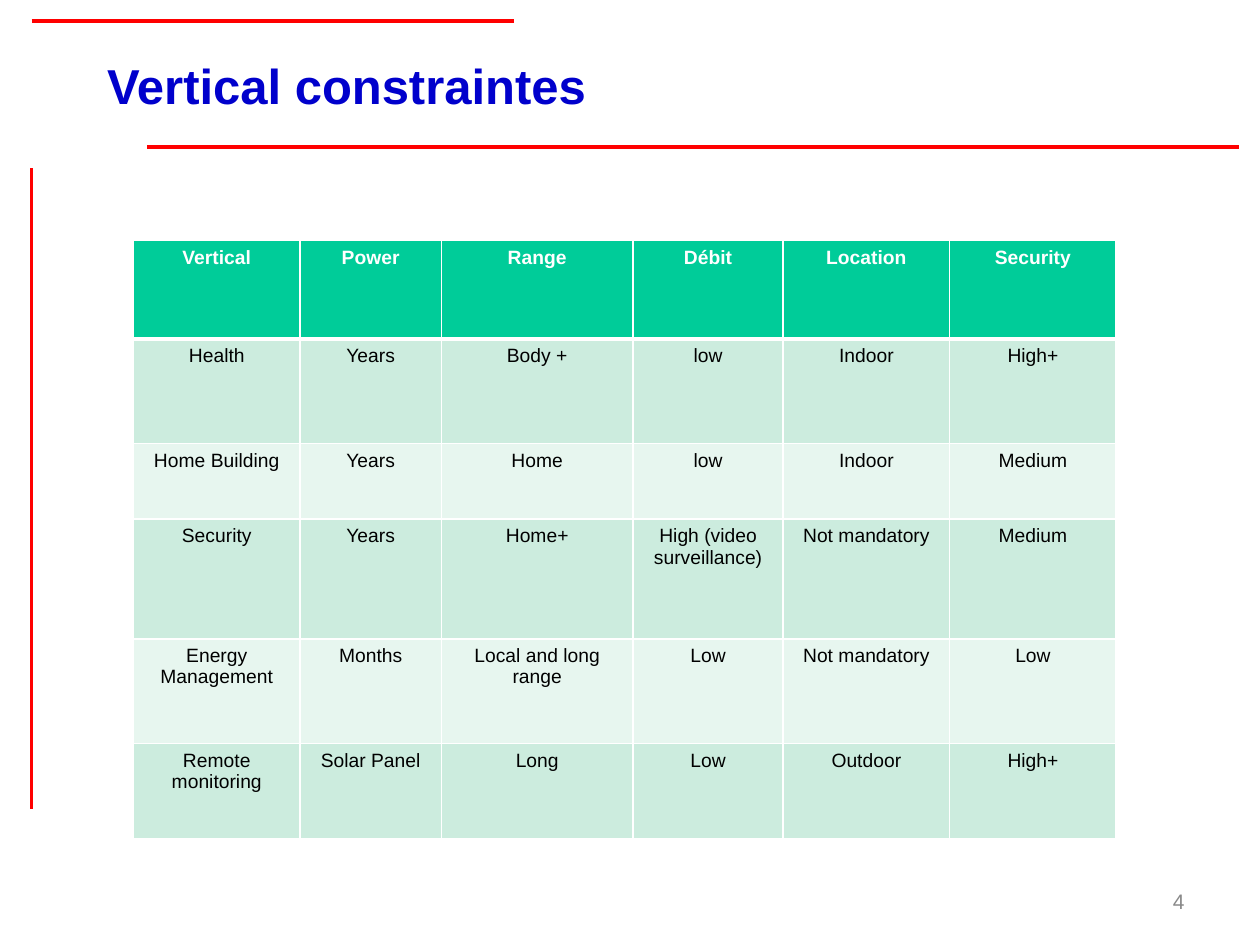
from dataclasses import dataclass

from lxml.etree import SubElement
from pptx import Presentation
from pptx.dml.color import RGBColor
from pptx.enum.shapes import MSO_CONNECTOR
from pptx.enum.text import MSO_ANCHOR, PP_ALIGN
from pptx.oxml.ns import qn
from pptx.util import Inches, Pt


@dataclass(frozen=True)
class Theme:
    """Colours, font and sizes used on the slide."""
    font: str = "Arial"
    title: str = "0000CC"
    rule: str = "FF0000"
    header: str = "00CC99"
    bands: tuple = ("CCECDE", "E7F6EF")
    white: str = "FFFFFF"
    text: str = "000000"
    muted: str = "898989"
    title_size: float = 28
    table_size: float = 11
    number_size: float = 12
    rule_width: float = 2.25
    grid_width: float = 1
    header_width: float = 3


THEME = Theme()
RULES = [(1.17, 1.17, 9.83, 1.17), (0.25, 6.42, 0.25, 1.33), (0.25, 0.17, 4.08, 0.17)]
COLUMN_WIDTHS = [1.32, 1.12, 1.52, 1.19, 1.32, 1.32]
ROW_HEIGHTS = [0.78, 0.83, 0.6, 0.95, 0.83, 0.76]
ROWS = [
    ["Vertical", "Power", "Range", "Débit", "Location", "Security"],
    ["Health", "Years", "Body +", "low", "Indoor", "High+"],
    ["Home Building", "Years", "Home", "low", "Indoor", "Medium"],
    ["Security", "Years", "Home+", "High (video surveillance)", "Not mandatory", "Medium"],
    ["Energy Management", "Months", "Local and long range", "Low", "Not mandatory", "Low"],
    ["Remote monitoring", "Solar Panel", "Long", "Low", "Outdoor", "High+"],
]


def write(tf, text, size, color, bold=False, align=PP_ALIGN.LEFT):
    """Write one formatted paragraph into a text frame."""
    tf.word_wrap = True
    p = tf.paragraphs[0]
    p.alignment = align
    r = p.add_run()
    r.text = text
    r.font.name = THEME.font
    r.font.size = Pt(size)
    r.font.bold = bold
    r.font.color.rgb = RGBColor.from_string(color)


def add_rule(s, x1, y1, x2, y2):
    """Draw one straight red rule."""
    line = s.shapes.add_connector(
        MSO_CONNECTOR.STRAIGHT, Inches(x1), Inches(y1), Inches(x2), Inches(y2))
    line.line.color.rgb = RGBColor.from_string(THEME.rule)
    line.line.width = Pt(THEME.rule_width)
    SubElement(line._element.spPr, qn("a:effectLst"))


def add_title(s, text, left, top, width, height):
    """Place and fill the title placeholder."""
    sp = s.shapes.title
    sp.left, sp.top, sp.width, sp.height = map(Inches, (left, top, width, height))
    sp.text_frame.vertical_anchor = MSO_ANCHOR.MIDDLE
    write(sp.text_frame, text, THEME.title_size, THEME.title, bold=True)


def set_borders(cell, top, bottom):
    """Give a cell white borders with the given top and bottom widths."""
    tcPr = cell._tc.get_or_add_tcPr()
    widths = {"L": THEME.grid_width, "R": THEME.grid_width, "T": top, "B": bottom}
    for side, width in widths.items():
        ln = SubElement(tcPr, qn(f"a:ln{side}"), w=str(Pt(width)))
        SubElement(SubElement(ln, qn("a:solidFill")), qn("a:srgbClr"), val=THEME.white)


def add_constraints_table(s, left, top, width, height):
    """Build the table of constraints with a header and banded rows."""
    table = s.shapes.add_table(
        len(ROWS), len(COLUMN_WIDTHS), *map(Inches, (left, top, width, height))).table
    for column, share in zip(table.columns, COLUMN_WIDTHS):
        column.width = Inches(width * share / sum(COLUMN_WIDTHS))
    for i, (row, share) in enumerate(zip(table.rows, ROW_HEIGHTS)):
        row.height = Inches(height * share / sum(ROW_HEIGHTS))
        header = i == 0
        fill = THEME.header if header else THEME.bands[(i - 1) % 2]
        for cell, text in zip(row.cells, ROWS[i]):
            set_borders(cell,
                        top=THEME.header_width if i == 1 else THEME.grid_width,
                        bottom=THEME.header_width if header else THEME.grid_width)
            cell.fill.solid()
            cell.fill.fore_color.rgb = RGBColor.from_string(fill)
            write(cell.text_frame, text, THEME.table_size,
                  THEME.white if header else THEME.text,
                  bold=header, align=PP_ALIGN.CENTER)


def add_page_number(s, text, left, top, width, height):
    """Place the page number at the right of its box."""
    tf = s.shapes.add_textbox(*map(Inches, (left, top, width, height))).text_frame
    tf.vertical_anchor = MSO_ANCHOR.MIDDLE
    write(tf, text, THEME.number_size, THEME.muted, align=PP_ALIGN.RIGHT)


def main():
    """Build and save the slide."""
    prs = Presentation()
    prs.slide_width, prs.slide_height = Inches(10), Inches(7.5)
    s = prs.slides.add_slide(prs.slide_layouts[5])
    for ends in RULES:
        add_rule(s, *ends)
    add_title(s, "Vertical constraintes", 0.75, 0.26, 9.25, 0.83)
    add_constraints_table(s, 1.06, 1.91, 7.8, 4.75)
    add_page_number(s, "4", 7.17, 6.95, 2.33, 0.4)
    prs.save("out.pptx")


if __name__ == "__main__":
    main()
